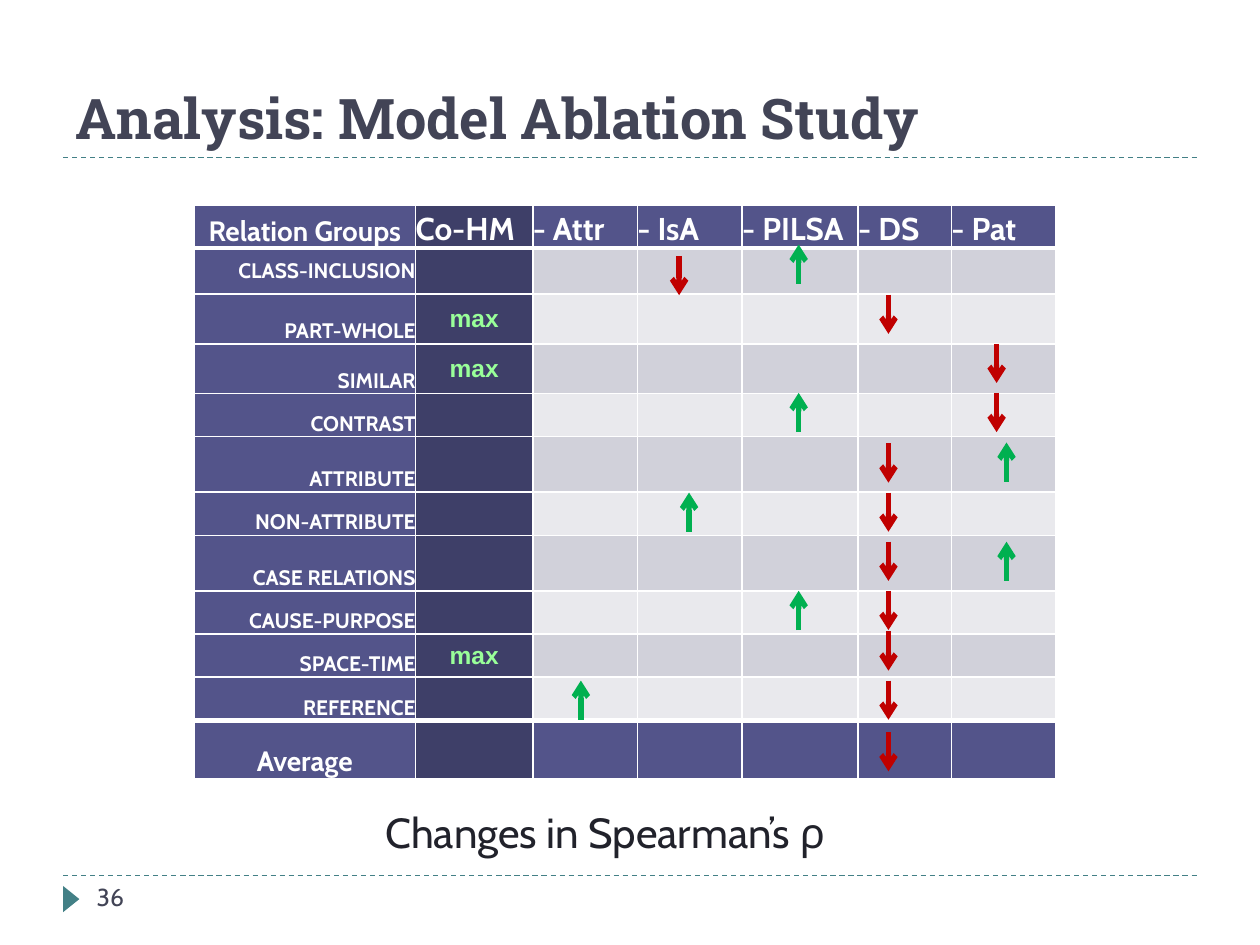
from lxml import etree
from pptx import Presentation
from pptx.dml.color import RGBColor
from pptx.enum.dml import MSO_LINE
from pptx.enum.shapes import MSO_CONNECTOR, MSO_SHAPE
from pptx.enum.text import MSO_ANCHOR, PP_ALIGN
from pptx.oxml.ns import qn
from pptx.util import Cm, Pt

COLORS = {
    "accent": "438086", "title": "424456", "caption": "21222B",
    "heading": "53548A", "baseline": "3E3F68", "odd": "D1D1DA", "even": "E9E9ED",
    "white": "FFFFFF", "max": "99FF99", "up": "00B050", "down": "C00000",
}
BODY_FONT = "Cabin"

HEADERS = ["Relation Groups", "Co-HM", "- Attr", "- IsA", "- PILSA", "- DS", "- Pat"]
RELATIONS = ["CLASS-INCLUSION", "PART-WHOLE", "SIMILAR", "CONTRAST", "ATTRIBUTE",
             "NON-ATTRIBUTE", "CASE RELATIONS", "CAUSE-PURPOSE", "SPACE-TIME", "REFERENCE"]
BEST_RELATIONS = {"PART-WHOLE", "SIMILAR", "SPACE-TIME"}
COLUMN_WIDTHS = [4.47, 2.36, 2.11, 2.11, 2.34, 1.88, 2.11]
ROW_HEIGHTS = [0.87, 0.93, 1, 1, 0.87, 1.12, 0.87, 1.12, 0.87, 0.87, 0.87, 1.17]

# Direction, distance from the table's left edge, distances from its top edge
CHANGES = [
    ("up", 7.8, [9.61]),
    ("up", 9.98, [5.82]),
    ("up", 12.19, [0.82, 3.81, 7.8]),
    ("up", 16.38, [4.81, 6.81]),
    ("down", 9.78, [1.05]),
    ("down", 14, [1.83, 4.83, 5.82, 6.81, 7.8, 8.62, 9.61, 10.65]),
    ("down", 16.18, [2.82, 3.81]),
]
ARROW_LENGTH = 0.79


def color(name):
    return RGBColor.from_string(COLORS[name])


def set_font(paragraph, size, color_name, name=BODY_FONT, bold=False):
    font = paragraph.font
    font.size, font.name, font.bold = Pt(size), name, bold
    font.color.rgb = color(color_name)


def add_line(slide, start, end, color_name, width):
    line = slide.shapes.add_connector(MSO_CONNECTOR.STRAIGHT, *map(Cm, start + end))
    line.line.color.rgb = color(color_name)
    line.line.width = Pt(width)
    etree.SubElement(line._element.spPr, qn("a:effectLst"))
    return line


def add_text(slide, box, text, size, color_name, alignment=PP_ALIGN.LEFT):
    frame = slide.shapes.add_textbox(*map(Cm, box)).text_frame
    frame.word_wrap = True
    paragraph = frame.paragraphs[0]
    paragraph.text = text
    paragraph.alignment = alignment
    set_font(paragraph, size, color_name)


def add_title(slide, left, top, width, height):
    title = slide.shapes.title
    title.left, title.top, title.width, title.height = map(Cm, (left, top, width, height))
    frame = title.text_frame
    frame.vertical_anchor = MSO_ANCHOR.BOTTOM
    paragraph = frame.paragraphs[0]
    paragraph.text = "Analysis: Model Ablation Study"
    paragraph.alignment = PP_ALIGN.LEFT
    set_font(paragraph, 32, "title", "Roboto Slab", True)
    add_rule(slide, left, top + height, width)


def add_rule(slide, left, top, width):
    rule = add_line(slide, (left, top), (left + width, top), "accent", 0.75)
    rule.line.dash_style = MSO_LINE.DASH


def add_footer(slide, left, top, width):
    add_rule(slide, left, top, width)
    marker = slide.shapes.add_shape(MSO_SHAPE.ISOSCELES_TRIANGLE, Cm(left - 0.1),
                                    Cm(top + 0.31), Cm(0.53), Cm(0.33))
    marker.rotation = 90
    marker.shadow.inherit = False
    marker.fill.solid()
    marker.fill.fore_color.rgb = color("accent")
    marker.line.fill.background()
    add_text(slide, (left + 0.43, top, 5.5, 1.02), "36", 14, "title")


def set_borders(cell, top, bottom):
    properties = cell._tc.get_or_add_tcPr()
    for side, width in (("L", 1), ("R", 1), ("T", top), ("B", bottom)):
        border = etree.SubElement(properties, qn(f"a:ln{side}"), w=str(Pt(width)))
        fill = etree.SubElement(border, qn("a:solidFill"))
        etree.SubElement(fill, qn("a:srgbClr"), val=COLORS["white"])


def format_cell(cell, row, column):
    last_row = len(ROW_HEIGHTS) - 1
    set_borders(cell, 3 if row in (1, last_row) else 1, 3 if row in (0, last_row - 1) else 1)
    cell.margin_left = cell.margin_right = cell.margin_top = cell.margin_bottom = 0
    if column == 1:
        fill_name = "baseline"
    elif column == 0 or row in (0, last_row):
        fill_name = "heading"
    else:
        fill_name = "odd" if row % 2 else "even"
    cell.fill.solid()
    cell.fill.fore_color.rgb = color(fill_name)

    paragraph = cell.text_frame.paragraphs[0]
    is_best = column == 1 and paragraph.text == "max"
    centered = is_best or (column == 0 and row in (0, last_row))
    middle = is_best or (row == 1 and column == 0)
    cell.vertical_anchor = MSO_ANCHOR.MIDDLE if middle else MSO_ANCHOR.BOTTOM
    if centered:
        paragraph.alignment = PP_ALIGN.CENTER
    else:
        paragraph.alignment = PP_ALIGN.RIGHT if column == 0 else PP_ALIGN.LEFT
    if is_best:
        set_font(paragraph, 14, "max", "Arial", True)
    else:
        size = 16 if centered else 18 if row == 0 else 12
        set_font(paragraph, size, "white", bold=True)


def add_ablation_table(slide, left, top):
    width, height = sum(COLUMN_WIDTHS), sum(ROW_HEIGHTS)
    table = slide.shapes.add_table(len(ROW_HEIGHTS), len(COLUMN_WIDTHS),
                                   *map(Cm, (left, top, width, height))).table
    for column, column_width in zip(table.columns, COLUMN_WIDTHS):
        column.width = Cm(column_width)
    groups = [[name, "max" if name in BEST_RELATIONS else ""] for name in RELATIONS]
    rows = [HEADERS, *groups, ["Average"]]
    for row, (texts, row_height) in enumerate(zip(rows, ROW_HEIGHTS)):
        table.rows[row].height = Cm(row_height)
        for column in range(len(COLUMN_WIDTHS)):
            cell = table.cell(row, column)
            if column < len(texts):
                cell.text = texts[column]
            format_cell(cell, row, column)


def add_change_arrows(slide, left, top):
    for direction, offset, tops in CHANGES:
        for arrow_top in tops:
            x, y = left + offset, top + arrow_top
            ends = [(x, y), (x, y + ARROW_LENGTH)]
            if direction == "up":
                ends.reverse()
            arrow = add_line(slide, *ends, direction, 3)
            etree.SubElement(arrow.line._get_or_add_ln(), qn("a:tailEnd"), type="arrow")


def main():
    presentation = Presentation()
    presentation.slide_width, presentation.slide_height = Cm(25.4), Cm(19.05)
    slide = presentation.slides.add_slide(presentation.slide_layouts[5])
    add_title(slide, 1.27, 0.43, 22.86, 2.74)
    add_ablation_table(slide, 3.91, 4.13)
    add_change_arrows(slide, 3.91, 4.11)
    add_text(slide, (4.7, 16.13, 15, 1.27), "Changes in Spearman’s ρ", 24, "caption",
             PP_ALIGN.CENTER)
    add_footer(slide, 1.27, 17.65, 22.86)
    presentation.save("out.pptx")


if __name__ == "__main__":
    main()
